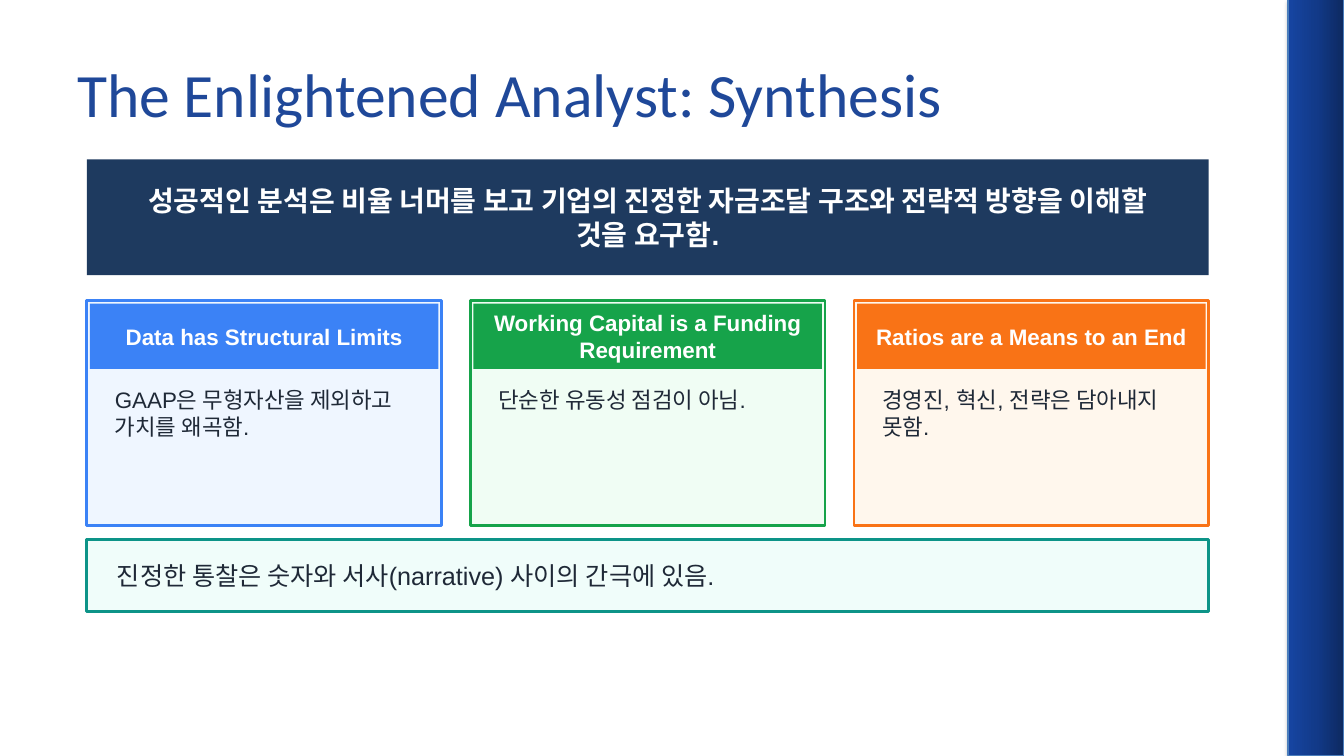
from copy import deepcopy

from lxml import etree
from pptx import Presentation
from pptx.dml.color import RGBColor
from pptx.enum import shapes, text
from pptx.oxml import ns
from pptx.util import Pt

WHITE = RGBColor(0xFF, 0xFF, 0xFF)
TITLE_BLUE = RGBColor(0x1F, 0x48, 0x99)
NAVY = RGBColor(0x1E, 0x3A, 0x5F)
INK = RGBColor(0x1F, 0x29, 0x37)
BLUE = RGBColor(0x3B, 0x82, 0xF6)
PALE_BLUE = RGBColor(0xEF, 0xF6, 0xFF)
GREEN = RGBColor(0x16, 0xA3, 0x4A)
PALE_GREEN = RGBColor(0xF0, 0xFD, 0xF4)
ORANGE = RGBColor(0xF9, 0x73, 0x16)
PALE_ORANGE = RGBColor(0xFF, 0xF7, 0xED)
TEAL = RGBColor(0x0D, 0x94, 0x88)
PALE_TEAL = RGBColor(0xF0, 0xFD, 0xFA)
BAR_DARK = RGBColor(0x0D, 0x29, 0x60)
BAR_MIDDLE = RGBColor(0x12, 0x3A, 0x89)
BAR_BRIGHT = RGBColor(0x16, 0x45, 0xA2)
BAR_EDGE = RGBColor(0x4B, 0x7E, 0xBC)

deck = Presentation()
deck.slide_width = Pt(960)
deck.slide_height = Pt(540)
page = deck.slides.add_slide(deck.slide_layouts[6])


def add_panel(left, top, width, height, fill=None, line=None, weight=2):
    panel = page.shapes.add_shape(
        shapes.MSO_SHAPE.RECTANGLE, Pt(left), Pt(top), Pt(width), Pt(height))
    panel.shadow.inherit = False
    if fill is not None:
        panel.fill.solid()
        panel.fill.fore_color.rgb = fill
    if line is None:
        panel.line.fill.background()
    else:
        panel.line.color.rgb = line
        panel.line.width = Pt(weight)
    return panel


def add_text(words, left, top, width, height, size=16, color=INK, bold=False,
             font="Arial", align=text.PP_ALIGN.LEFT,
             anchor=text.MSO_ANCHOR.MIDDLE):
    box = page.shapes.add_textbox(Pt(left), Pt(top), Pt(width), Pt(height))
    frame = box.text_frame
    frame.word_wrap = True
    frame.vertical_anchor = anchor
    para = frame.paragraphs[0]
    para.alignment = align
    span = para.add_run()
    span.text = words
    span.font.name = font
    span.font.size = Pt(size)
    span.font.bold = bold
    span.font.color.rgb = color


side_bar = add_panel(920, 0, 40, 540, line=BAR_EDGE, weight=0.75)
side_bar.fill.gradient()
side_bar.fill.gradient_angle = 180
stop_list = side_bar.fill._fill._gradFill.find(ns.qn("a:gsLst"))
stop_list.insert(1, deepcopy(stop_list[0]))
bar_colors = (BAR_DARK, BAR_MIDDLE, BAR_BRIGHT)
for stop, color, position in zip(side_bar.fill.gradient_stops, bar_colors, (0, 0.5, 1)):
    stop.color.rgb = color
    stop.position = position
effects = side_bar._element.spPr.find(ns.qn("a:effectLst"))
shadow = etree.SubElement(effects, ns.qn("a:outerShdw"), blurRad=str(Pt(3.1)),
                          dist=str(Pt(1.8)), dir="5400000", rotWithShape="0")
shadow_color = etree.SubElement(shadow, ns.qn("a:srgbClr"), val="000000")
etree.SubElement(shadow_color, ns.qn("a:alpha"), val="35000")

add_text("The Enlightened Analyst: Synthesis", 48, 21.6, 872, 90,
         size=44, color=TITLE_BLUE, font="Calibri")

LEFT, WIDTH = 62, 801.4
add_panel(LEFT, 113.8, WIDTH, 82.8, fill=NAVY)
add_text("성공적인 분석은 비율 너머를 보고 기업의 진정한 자금조달 구조와 "
         "전략적 방향을 이해할 것을 요구함.",
         LEFT + 21.6, 113.8, WIDTH - 43.2, 82.8, size=20, color=WHITE,
         bold=True, align=text.PP_ALIGN.CENTER)

cards = [
    ("Data has Structural Limits",
     "GAAP은 무형자산을 제외하고 가치를 왜곡함.", BLUE, PALE_BLUE),
    ("Working Capital is a Funding Requirement",
     "단순한 유동성 점검이 아님.", GREEN, PALE_GREEN),
    ("Ratios are a Means to an End",
     "경영진, 혁신, 전략은 담아내지 못함.", ORANGE, PALE_ORANGE),
]
CARD_TOP, CARD_WIDTH, CARD_HEIGHT = 214.6, 253.4, 160.6
CARD_STEP = (WIDTH - CARD_WIDTH) / 2
for index, (heading, body, accent, tint) in enumerate(cards):
    left = LEFT + index * CARD_STEP
    header = (left + 2.2, CARD_TOP + 2.2, CARD_WIDTH - 4.4, 46.8)
    add_panel(left, CARD_TOP, CARD_WIDTH, CARD_HEIGHT, fill=tint, line=accent)
    add_panel(*header, fill=accent)
    add_text(heading, *header, color=WHITE, bold=True, align=text.PP_ALIGN.CENTER)
    add_text(body, left + 13, CARD_TOP + 57.6, CARD_WIDTH - 26, 91.4,
             anchor=text.MSO_ANCHOR.TOP)

add_panel(LEFT, 385.2, WIDTH, 51.8, fill=PALE_TEAL, line=TEAL)
add_text("진정한 통찰은 숫자와 서사(narrative) 사이의 간극에 있음.",
         LEFT + 14.4, 385.2, WIDTH - 28.8, 51.8, size=18)

deck.save("out.pptx")
